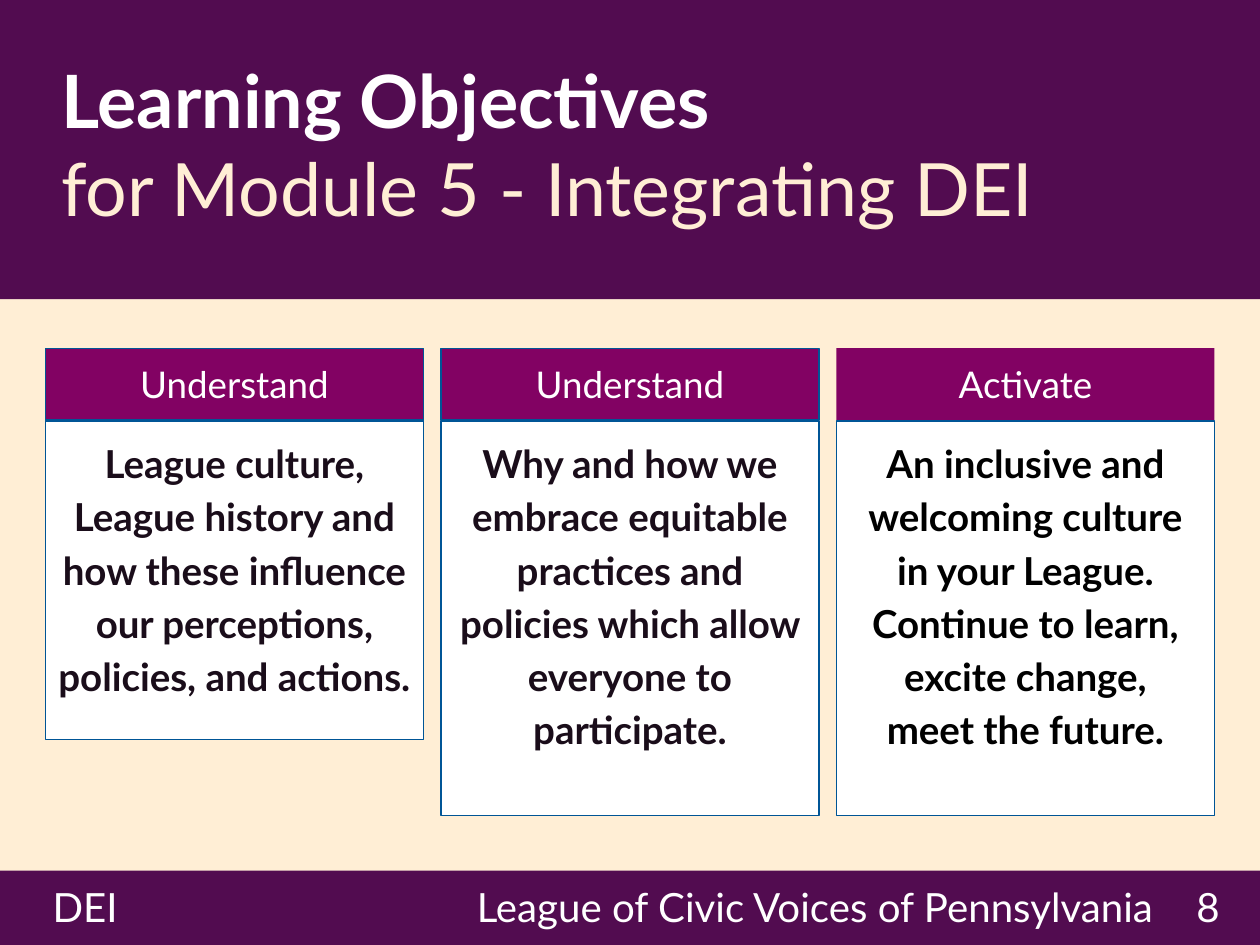
"""Build the learning objectives slide for Module 5."""
from pptx import Presentation
from pptx.dml.color import RGBColor
from pptx.enum.shapes import MSO_SHAPE
from pptx.enum.text import MSO_ANCHOR, PP_ALIGN
from pptx.util import Pt

COLORS = {
    "cream": "FFEED5", "purple": "520C50", "magenta": "820263",
    "blue": "005596", "white": "FFFFFF", "ink": "1A0D1A", "black": "000000",
}
FONT = "Lato"
WIDTH, HEIGHT = 720, 540
TITLE = [("Learning Objectives", "white", True),
         ("for Module 5 - Integrating DEI", "cream", False)]
CARDS = [
    {"head": "Understand", "head_line": "blue", "height": 182, "color": "ink",
     "body": ["League culture, League history and how these influence "
              "our perceptions, policies, and actions."]},
    {"head": "Understand", "head_line": "blue", "height": 225.5, "color": "ink",
     "body": ["Why and how we embrace equitable practices and policies "
              "which allow everyone to participate."]},
    {"head": "Activate", "head_line": None, "height": 225.5, "color": "black",
     "body": ["An inclusive and welcoming culture in your League.",
              "Continue to learn, excite change,",
              "meet the future."]},
]
FOOTER_TOP, FOOTER_TEXT_H = 497.5, 41
FOOTER = [
    ("DEI", 23, 164, PP_ALIGN.LEFT),
    ("League of Civic Voices of Pennsylvania", 200, 466.5, PP_ALIGN.RIGHT),
    ("8", 664, 40, PP_ALIGN.RIGHT),
]
CARD_LEFT, CARD_W, CARD_GAP = 26, 216, 10
HEAD_TOP, HEAD_H, BODY_TOP = 199, 41, 240.5


def rgb(name):
    return RGBColor.from_string(COLORS[name])


def add_rect(s, box, fill, line=None):
    sp = s.shapes.add_shape(MSO_SHAPE.RECTANGLE, *map(Pt, box))
    sp.shadow.inherit = False
    sp.fill.solid()
    sp.fill.fore_color.rgb = rgb(fill)
    if line:
        sp.line.color.rgb = rgb(line)
        sp.line.width = Pt(0.75)
    else:
        sp.line.fill.background()
    return sp


def write(sp, lines, size, align, anchor=MSO_ANCHOR.MIDDLE, spacing=None):
    tf = sp.text_frame
    tf.word_wrap = True
    tf.vertical_anchor = anchor
    tf.margin_left = tf.margin_right = tf.margin_top = tf.margin_bottom = Pt(7.2)
    for i, (text, color, bold) in enumerate(lines):
        p = tf.add_paragraph() if i else tf.paragraphs[0]
        p.text = text
        p.alignment = align
        p.line_spacing = spacing
        p.font.name = FONT
        p.font.size = Pt(size)
        p.font.bold = bold
        p.font.color.rgb = rgb(color)


def main():
    prs = Presentation()
    prs.slide_width, prs.slide_height = Pt(WIDTH), Pt(HEIGHT)
    s = prs.slides.add_slide(prs.slide_layouts[6])
    s.background.fill.solid()
    s.background.fill.fore_color.rgb = rgb("cream")

    add_rect(s, (0, FOOTER_TOP, WIDTH, HEIGHT - FOOTER_TOP), "purple")
    add_rect(s, (0, 0, WIDTH, 171), "purple")
    title = s.shapes.add_textbox(Pt(28), Pt(24), Pt(676), Pt(126))
    write(title, TITLE, 42, PP_ALIGN.LEFT, MSO_ANCHOR.TOP)

    for i, card in enumerate(CARDS):
        left = CARD_LEFT + i * (CARD_W + CARD_GAP)
        body = add_rect(s, (left, BODY_TOP, CARD_W, card["height"]), "white", "blue")
        lines = [(text, card["color"], True) for text in card["body"]]
        write(body, lines, 22, PP_ALIGN.CENTER, MSO_ANCHOR.TOP, 1.15)
        head = add_rect(s, (left, HEAD_TOP, CARD_W, HEAD_H), "magenta", card["head_line"])
        write(head, [(card["head"], "white", False)], 21, PP_ALIGN.CENTER)

    for text, left, width, align in FOOTER:
        sp = s.shapes.add_textbox(Pt(left), Pt(FOOTER_TOP), Pt(width), Pt(FOOTER_TEXT_H))
        write(sp, [(text, "white", False)], 23, align)

    prs.save("out.pptx")


if __name__ == "__main__":
    main()
